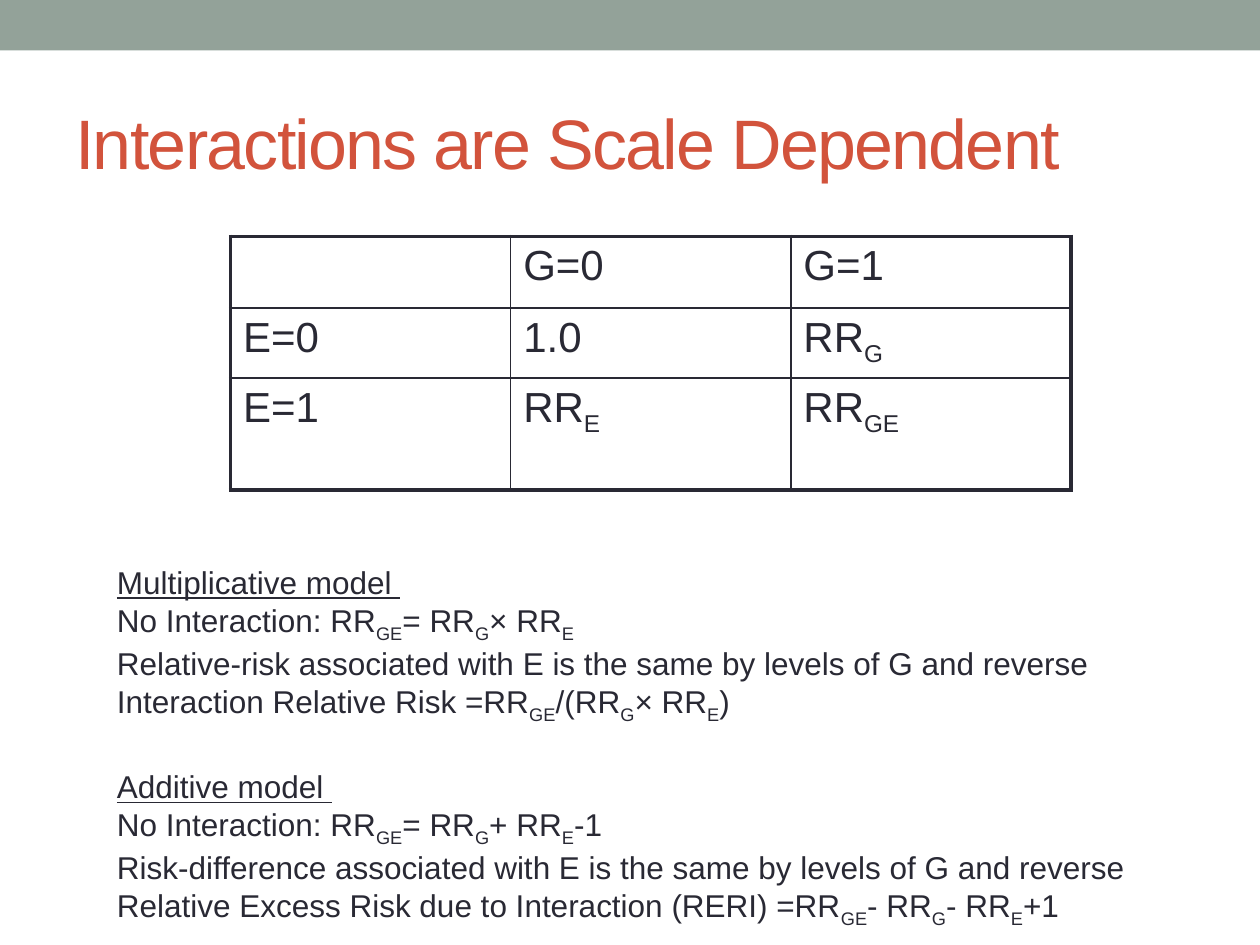
from dataclasses import dataclass

from lxml.etree import SubElement
from pptx import Presentation
from pptx.dml.color import RGBColor
from pptx.enum.shapes import MSO_SHAPE
from pptx.enum.text import MSO_ANCHOR
from pptx.oxml.ns import qn
from pptx.util import Inches, Pt

WIDE, HIGH = Inches(10), Inches(7.5)
INK = "292934"
THICK, THIN = 2.25, 1


@dataclass
class Box:
    left: float
    top: float
    width: float
    height: float

    def place(self) -> tuple:
        return (int(self.left * WIDE), int(self.top * HIGH),
                int(self.width * WIDE), int(self.height * HIGH))


@dataclass
class Line:
    text: str
    size: float = 18
    tint: str = INK
    under: bool = False
    gap: float = 0
    track: int = 0


def color(code: str) -> RGBColor:
    return RGBColor.from_string(code)


def write(para, line: Line) -> None:
    font = para.font
    font.name, font.size = "Arial", Pt(line.size)
    font.color.rgb = color(line.tint)
    font.underline = line.under
    para.space_before = Pt(line.gap)
    for spot, part in enumerate(line.text.split("_")):
        if not part:
            continue
        run = para.add_run()
        run.text = part
        props = run._r.get_or_add_rPr()
        if spot % 2:
            props.set("baseline", "-25000")
        if line.track:
            props.set("spc", str(line.track))


def add_text(slide, box: Box, lines: list[Line], anchor=MSO_ANCHOR.TOP) -> None:
    frame = slide.shapes.add_textbox(*box.place()).text_frame
    frame.word_wrap = True
    frame.vertical_anchor = anchor
    for spot, line in enumerate(lines):
        write(frame.add_paragraph() if spot else frame.paragraphs[0], line)


def add_edge(cell, side: str, width: float) -> None:
    edge = SubElement(cell._tc.get_or_add_tcPr(), qn(f"a:ln{side}"),
                      w=str(Pt(width)))
    fill = SubElement(edge, qn("a:solidFill"))
    SubElement(fill, qn("a:srgbClr"), val=INK)


def add_grid(slide, box: Box, rows: list[list[str]], tall: list[float]) -> None:
    last, end = len(rows) - 1, len(rows[0]) - 1
    table = slide.shapes.add_table(last + 1, end + 1, *box.place()).table
    table.first_row = table.horz_banding = False
    for row, size in zip(table.rows, tall):
        row.height = Inches(size)
    for y, texts in enumerate(rows):
        for x, text in enumerate(texts):
            cell = table.cell(y, x)
            outer = {"L": x == 0, "R": x == end, "T": y == 0, "B": y == last}
            for side, rim in outer.items():
                add_edge(cell, side, THICK if rim else THIN)
            cell.fill.background()
            write(cell.text_frame.paragraphs[0], Line(text, 24))


def main() -> None:
    deck = Presentation()
    deck.slide_width, deck.slide_height = WIDE, HIGH
    slide = deck.slides.add_slide(deck.slide_layouts[6])

    band = slide.shapes.add_shape(MSO_SHAPE.RECTANGLE,
                                  *Box(0, 0, 1, 0.4 / 7.5).place())
    band.shadow.inherit = False
    band.fill.solid()
    band.fill.fore_color.rgb = color("93A299")
    band.line.fill.background()

    title = Line("Interactions are Scale Dependent", 40, "D2533C", track=-100)
    add_text(slide, Box(0.05, 0.58 / 7.5, 0.9, 1.08 / 7.5), [title],
             MSO_ANCHOR.MIDDLE)

    add_grid(slide, Box(0.183, 0.25, 0.667, 0.264),
             [["", "G=0", "G=1"],
              ["E=0", "1.0", "RR_G_"],
              ["E=1", "RR_E_", "RR_GE_"]],
             [0.57, 0.52, 0.89])

    same = "is the same by levels of G and reverse"
    add_text(slide, Box(0.083, 4.42 / 7.5, 0.826, 4.24 / 7.5), [
        Line("Multiplicative model ", under=True),
        Line("No Interaction: RR_GE_= RR_G_× RR_E_"),
        Line(f"Relative-risk associated with E {same}"),
        Line("Interaction Relative Risk =RR_GE_/(RR_G_× RR_E_)"),
        Line("Additive model ", under=True, gap=24.5),
        Line("No Interaction: RR_GE_= RR_G_+ RR_E_-1"),
        Line(f"Risk-difference associated with E {same}"),
        Line("Relative Excess Risk due to Interaction (RERI) "
             "=RR_GE_- RR_G_- RR_E_+1"),
    ])
    deck.save("out.pptx")


if __name__ == "__main__":
    main()
